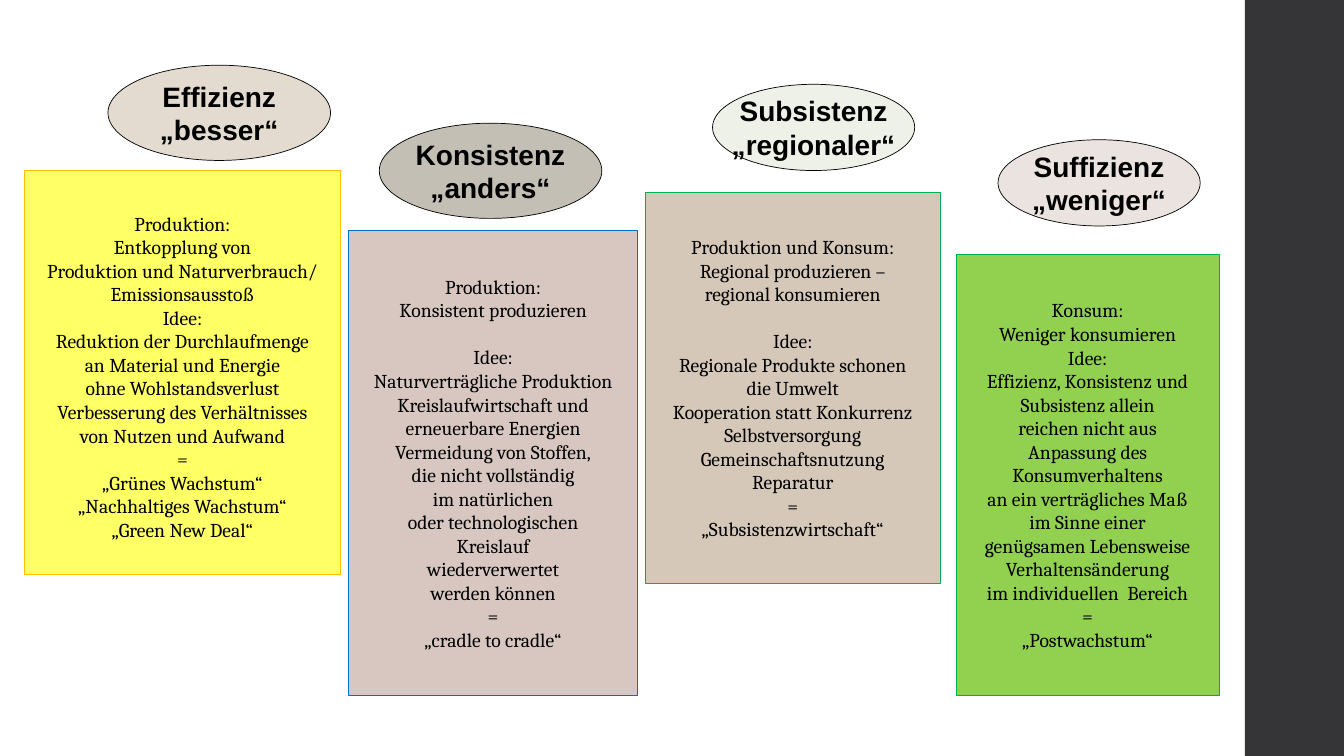
import copy

import pptx
import pptx.dml.color
import pptx.enum.shapes
import pptx.enum.text
import pptx.oxml.ns
import pptx.util

Pt = pptx.util.Pt
SHAPE = pptx.enum.shapes.MSO_SHAPE

HEADING = {"name": "Arial", "size": Pt(20), "bold": True}
BODY = {"name": "Cambria", "size": Pt(14), "bold": False}
SECTION_GAP = 16.8

# box: left, top, width, height of the whole column
# oval: left, width, height; drop: from column top to panel top
# sections: lists of paragraphs, with a gap between sections
COLUMNS = [
    {
        "box": (17.5, 46.6, 225.8, 363.6), "oval": (59.6, 159, 68), "drop": 74.8,
        "oval_fill": "E3DBD0", "fill": "FFFF66", "line": "FFC000", "inset_top": 9.6,
        "heading": ["Effizienz", "„besser“"],
        "sections": [[
            "Produktion:",
            "Entkopplung von",
            "Produktion und Naturverbrauch/",
            "Emissionsausstoß",
            "Idee:\nReduktion der Durchlaufmenge\nan Material und Energie\n"
            "ohne Wohlstandsverlust",
            "Verbesserung des Verhältnisses\nvon Nutzen und Aufwand",
            "=",
            "„Grünes Wachstum“",
            "„Nachhaltiges Wachstum“",
            "„Green New Deal“",
        ]],
    },
    {
        "box": (249, 88, 206.6, 408.6), "oval": (21.9, 159, 68), "drop": 76.8,
        "oval_fill": "C3BFB5", "fill": "D7C7C0", "line": "0070C0", "inset_top": 3.6,
        "heading": ["Konsistenz", "„anders“"],
        "sections": [
            ["Produktion:", "Konsistent produzieren"],
            [
                "Idee:\nNaturverträgliche Produktion\nKreislaufwirtschaft und\n"
                "erneuerbare Energien",
                "Vermeidung von Stoffen,\ndie nicht vollständig\nim natürlichen\n"
                "oder technologischen\nKreislauf\nwiederverwertet\nwerden können",
                "=",
                "„cradle to cradle“",
            ],
        ],
    },
    {
        "box": (461, 60.2, 210.6, 356.5), "oval": (48, 144.4, 61.6), "drop": 77.2,
        "oval_fill": "EDF1E7", "fill": "D5C8B8", "line": "00B050", "inset_top": 3.6,
        "heading": ["Subsistenz", "„regionaler“"],
        "sections": [
            ["Produktion und Konsum:", "Regional produzieren –\nregional konsumieren"],
            [
                "Idee:",
                "Regionale Produkte schonen\ndie Umwelt\nKooperation statt Konkurrenz",
                "Selbstversorgung",
                "Gemeinschaftsnutzung",
                "Reparatur",
                "=",
                "„Subsistenzwirtschaft“",
            ],
        ],
    },
    {
        "box": (683, 99.8, 187.8, 396.8), "oval": (29.9, 144.4, 61.6), "drop": 82,
        "oval_fill": "EBE3E0", "fill": "92D050", "line": "00B050", "inset_top": 3.6,
        "heading": ["Suffizienz", "„weniger“"],
        "sections": [[
            "Konsum:",
            "Weniger konsumieren",
            "Idee:",
            "Effizienz, Konsistenz und",
            "Subsistenz allein",
            "reichen nicht aus\nAnpassung des\nKonsumverhaltens\n"
            "an ein verträgliches Maß\nim Sinne einer\ngenügsamen Lebensweise",
            "Verhaltensänderung\nim individuellen  Bereich\n=\n„Postwachstum“",
        ]],
    },
]


def rgb(value):
    return pptx.dml.color.RGBColor.from_string(value)


def add_shape(slide, kind, box, fill, line=None):
    sp = slide.shapes.add_shape(kind, *(Pt(v) for v in box))
    sp.shadow.inherit = False
    sp.fill.solid()
    sp.fill.fore_color.rgb = rgb(fill)
    if line:
        sp.line.color.rgb = rgb(line)
        sp.line.width = Pt(0.5)
    else:
        sp.line.fill.background()
    return sp


def write_text(sp, sections, font, inset_top=3.6):
    tf = sp.text_frame
    frame = {
        "word_wrap": False, "vertical_anchor": pptx.enum.text.MSO_ANCHOR.MIDDLE,
        "margin_left": Pt(7.2), "margin_right": Pt(7.2),
        "margin_top": Pt(inset_top), "margin_bottom": Pt(3.6),
    }
    for key, value in frame.items():
        setattr(tf, key, value)
    p = None
    for number, section in enumerate(sections):
        for row, text in enumerate(section):
            p = tf.add_paragraph() if p else tf.paragraphs[0]
            p.text = text
            p.alignment = pptx.enum.text.PP_ALIGN.CENTER
            if number and row == 0:
                p.space_before = Pt(SECTION_GAP)
            for r in p.runs:
                for key, value in font.items():
                    setattr(r.font, key, value)
                r.font.color.rgb = rgb("000000")
            # Line breaks take the text size, so line spacing stays even
            for br in p._p.findall(pptx.oxml.ns.qn("a:br")):
                br.append(copy.deepcopy(p.runs[0]._r.rPr))


def add_column(slide, col):
    x, y, w, h = col["box"]
    # Text panel
    panel = add_shape(slide, SHAPE.RECTANGLE, (x, y + col["drop"], w, h - col["drop"]),
                      col["fill"], col["line"])
    write_text(panel, col["sections"], BODY, col["inset_top"])
    # Heading oval
    dx, oval_w, oval_h = col["oval"]
    oval = add_shape(slide, SHAPE.OVAL, (x + dx, y, oval_w, oval_h),
                     col["oval_fill"], "000000")
    write_text(oval, [col["heading"]], HEADING)


def main():
    prs = pptx.Presentation()
    prs.slide_width, prs.slide_height = Pt(960), Pt(540)
    slide = prs.slides.add_slide(prs.slide_layouts.get_by_name("Blank"))
    # Dark side bar
    add_shape(slide, SHAPE.RECTANGLE, (889.2, 0, 70.8, 540), "353537")
    # Four strategies
    for col in COLUMNS:
        add_column(slide, col)
    prs.save("out.pptx")


if __name__ == "__main__":
    main()
